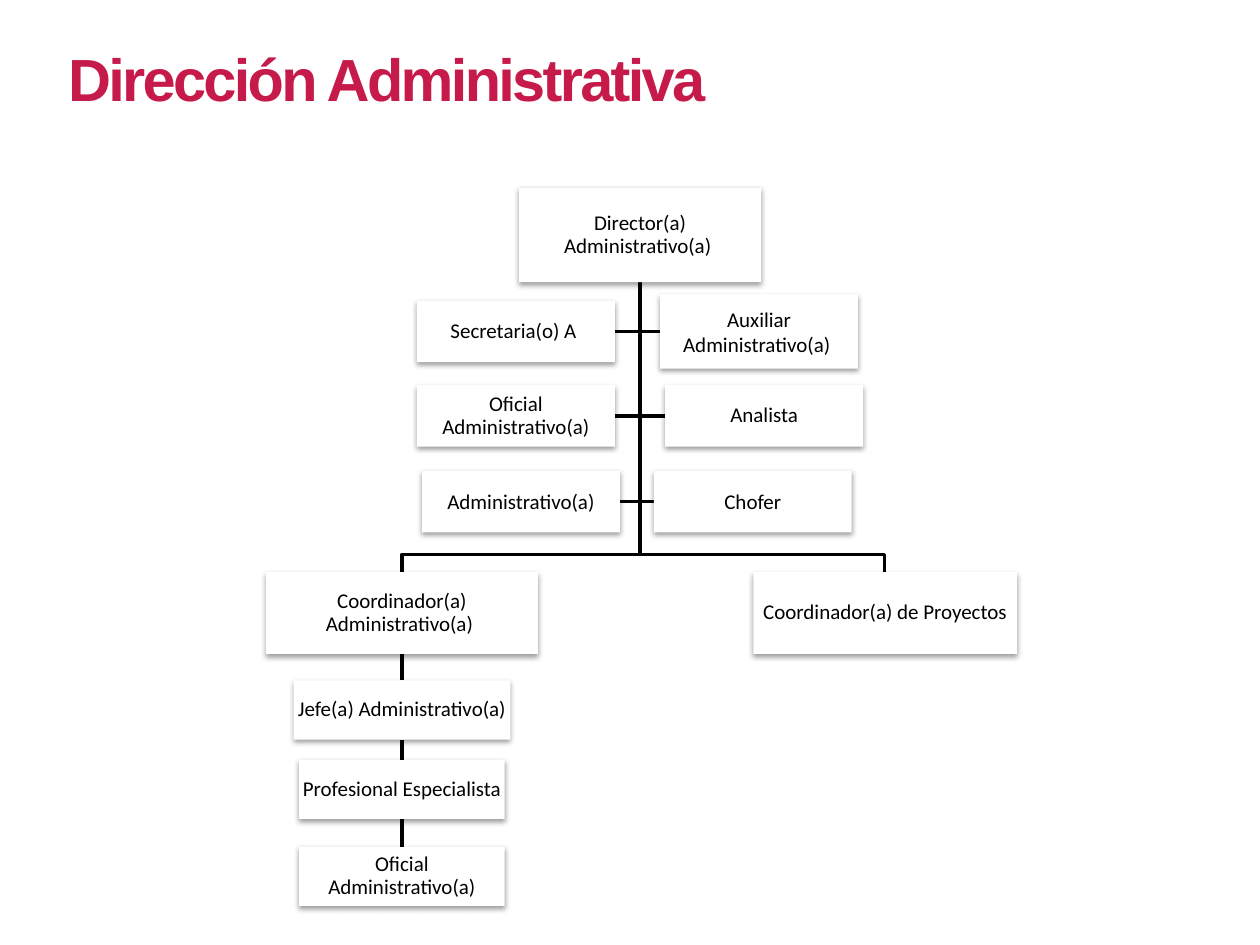
"""Build the organisation chart slide of the Dirección Administrativa."""
from lxml import etree
from pptx import Presentation
from pptx.dml.color import RGBColor
from pptx.enum import shapes, text
from pptx.oxml import parse_xml
from pptx.oxml.ns import nsdecls, qn
from pptx.util import Inches, Pt

CRIMSON = RGBColor(0xC5, 0x1A, 0x4A)
BLACK = RGBColor(0, 0, 0)
WHITE = RGBColor(0xFF, 0xFF, 0xFF)

SHADOW = (
    f'<a:effectLst {nsdecls("a")}><a:outerShdw blurRad="40000" dist="20000" dir="5400000" '
    'rotWithShape="0"><a:srgbClr val="000000"><a:alpha val="38000"/></a:srgbClr>'
    '</a:outerShdw></a:effectLst>'
)

TRUNK_X, TRUNK_TOP, BUS_Y = 5.08, 2.24, 4.4
COORDINATOR_TOP, CHAIN_X = 4.54, 3.19
STAFF_WIDTH = 1.57

presentation = Presentation()
presentation.slide_width = Inches(10)
presentation.slide_height = Inches(7.5)
slide = presentation.slides.add_slide(presentation.slide_layouts[5])


def add_box(label, left, top, width, height, line_spacing=0.9):
    shape = slide.shapes.add_shape(
        shapes.MSO_SHAPE.RECTANGLE, Inches(left), Inches(top), Inches(width), Inches(height))
    shape.fill.solid()
    shape.fill.fore_color.rgb = WHITE
    shape.line.fill.background()
    shape._element.spPr.append(parse_xml(SHADOW))
    frame = shape.text_frame
    frame.word_wrap = True
    frame.vertical_anchor = text.MSO_ANCHOR.MIDDLE
    frame.margin_left = frame.margin_right = Inches(0.01)
    frame.margin_top = frame.margin_bottom = Inches(0.01)
    frame.text = label
    paragraph = frame.paragraphs[0]
    paragraph.alignment = text.PP_ALIGN.CENTER
    paragraph.line_spacing = line_spacing
    font = paragraph.runs[0].font
    font.name, font.size, font.color.rgb = "Calibri", Pt(12), BLACK
    return shape


def add_branch(*points):
    corners = [(Inches(x), Inches(y)) for x, y in points]
    builder = slide.shapes.build_freeform(*corners[0])
    builder.add_line_segments(corners[1:], close=False)
    branch = builder.convert_to_shape()
    branch.fill.background()
    branch.line.color.rgb = BLACK
    branch.line.width = Pt(2)
    branch.shadow.inherit = False


title = slide.shapes.title
title.left, title.top, title.width, title.height = (
    Inches(0.44), Inches(0.28), Inches(6.81), Inches(0.69))
title.text_frame.text = "Dirección Administrativa"
title.text_frame.vertical_anchor = text.MSO_ANCHOR.TOP
title_paragraph = title.text_frame.paragraphs[0]
title_paragraph.alignment = text.PP_ALIGN.LEFT
title_font = title_paragraph.runs[0].font
title_font.name, title_font.size, title_font.bold = "Arial", Pt(34), True
title_font.color.rgb = CRIMSON
title_paragraph.runs[0]._r.get_or_add_rPr().set("spc", "-150")

staff = [
    ("Secretaria(o) A ", 3.31, 2.63, 0.49, 0.9),
    ("Auxiliar Administrativo(a) ", 5.24, 2.63, 0.59, 1.0),
    ("Oficial Administrativo(a)", 3.31, 3.3, 0.49, 0.9),
    ("Analista", 5.28, 3.3, 0.49, 0.9),
    ("Administrativo(a)", 3.35, 3.98, 0.49, 1.0),
    ("Chofer", 5.19, 3.98, 0.49, 1.0),
]
for label, left, middle, height, line_spacing in staff:
    edge = left if left > TRUNK_X else left + STAFF_WIDTH
    add_branch((TRUNK_X, TRUNK_TOP), (TRUNK_X, middle), (edge, middle))
for coordinator_x in (CHAIN_X, 7.02):
    add_branch((TRUNK_X, TRUNK_TOP), (TRUNK_X, BUS_Y),
               (coordinator_x, BUS_Y), (coordinator_x, COORDINATOR_TOP))

add_box("Director(a) Administrativo(a) ", 4.12, 1.49, 1.92, 0.75)
add_box("Coordinador(a) de Proyectos", 5.98, COORDINATOR_TOP, 2.09, 0.65)
for label, left, middle, height, line_spacing in staff:
    add_box(label, left, middle - height / 2, STAFF_WIDTH, height, line_spacing)

chain = [
    ("Coordinador(a) Administrativo(a) ", COORDINATOR_TOP, 2.16, 0.65),
    ("Jefe(a) Administrativo(a)", 5.4, 1.72, 0.47),
    ("Profesional Especialista", 6.03, 1.63, 0.47),
    ("Oficial Administrativo(a)", 6.72, 1.63, 0.47),
]
chain_boxes = [add_box(label, CHAIN_X - width / 2, top, width, height)
               for label, top, width, height in chain]
for upper, lower in zip(chain_boxes, chain_boxes[1:]):
    connector = slide.shapes.add_connector(shapes.MSO_CONNECTOR.STRAIGHT, 0, 0, 0, 0)
    connector.begin_connect(upper, 2)
    connector.end_connect(lower, 0)
    connector.line.color.rgb = BLACK
    connector.line.width = Pt(2)
    etree.SubElement(connector._element.spPr, qn("a:effectLst"))

presentation.save("out.pptx")
